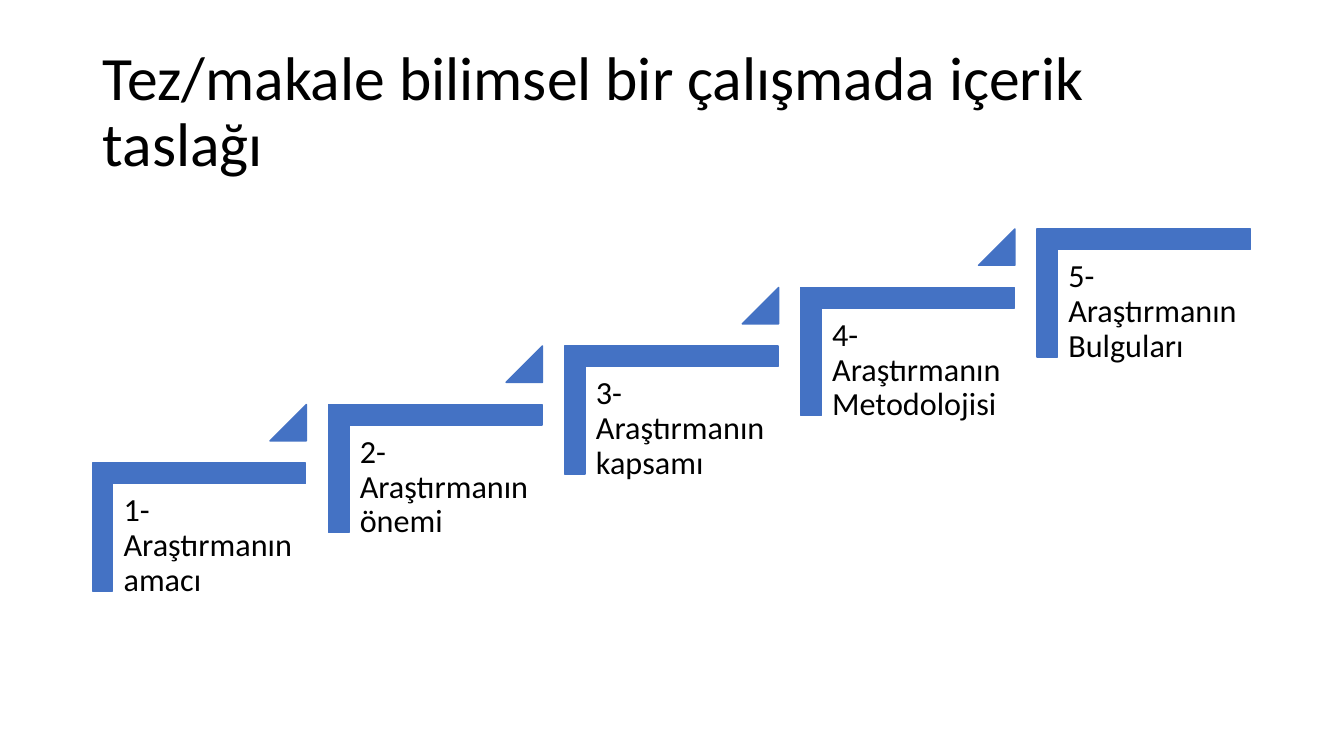
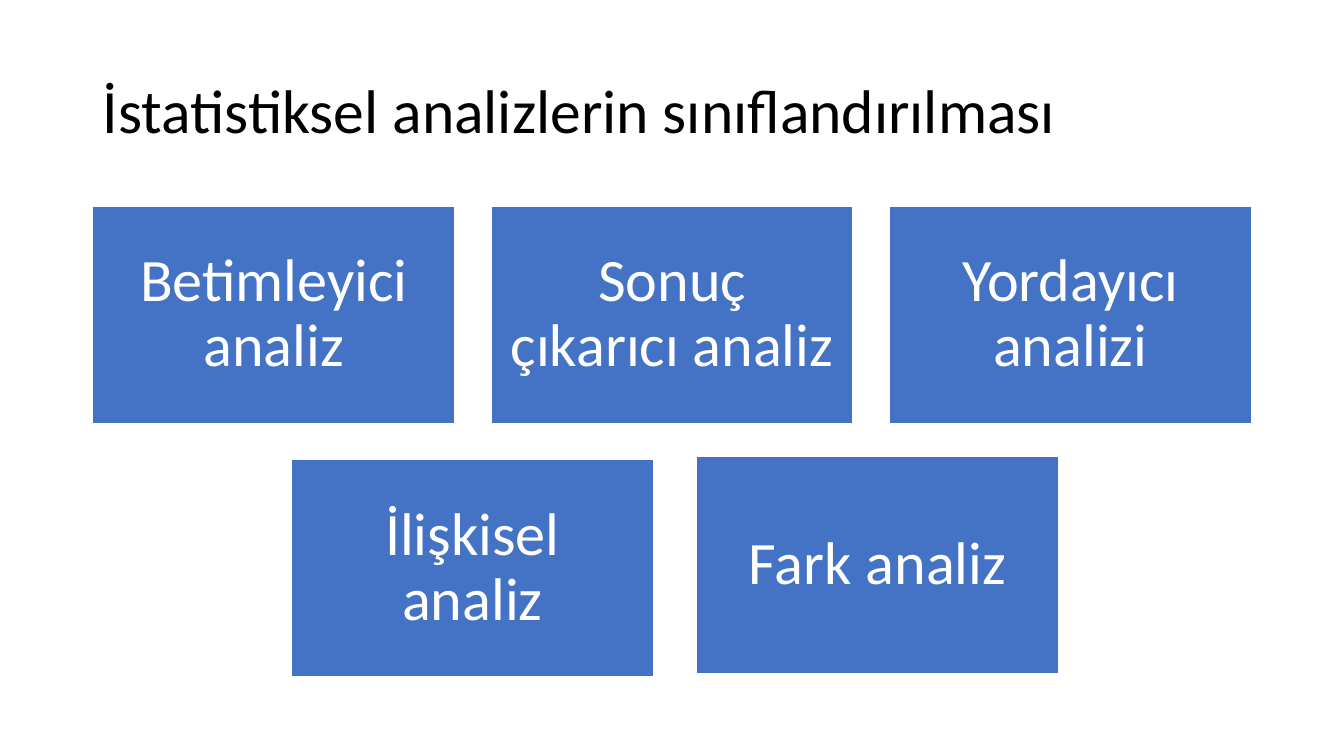
from dataclasses import dataclass

from pptx import Presentation
from pptx.dml.color import RGBColor
from pptx.enum.shapes import MSO_SHAPE
from pptx.enum.text import MSO_ANCHOR, PP_ALIGN
from pptx.util import Pt


@dataclass(frozen=True)
class Theme:
    """Colours, font and type sizes shared by the slides."""
    blue: RGBColor = RGBColor(0x44, 0x72, 0xC4)
    black: RGBColor = RGBColor(0, 0, 0)
    white: RGBColor = RGBColor(0xFF, 0xFF, 0xFF)
    font: str = "Calibri"
    title: float = 44
    step: float = 23
    card: float = 43


THEME = Theme()
LEFT = 66.24
STEPS = ["1- Araştırmanın amacı", "2- Araştırmanın önemi", "3- Araştırmanın kapsamı",
         "4- Araştırmanın Metodolojisi", "5- Araştırmanın Bulguları"]
TOP_CARDS = ["Betimleyici analiz", "Sonuç çıkarıcı analiz", "Yordayıcı analizi"]
LOWER_CARDS = [("İlişkisel analiz", 208.1, 328.4), ("Fark analiz", 497.5, 326.2)]


def write(sp, text, size, color, inset=7.2, align=PP_ALIGN.LEFT, anchor=MSO_ANCHOR.TOP):
    """Write one styled paragraph into a shape."""
    tf = sp.text_frame
    tf.text = text
    tf.word_wrap = True
    tf.vertical_anchor = anchor
    tf.margin_left = tf.margin_right = tf.margin_top = tf.margin_bottom = Pt(inset)
    p = tf.paragraphs[0]
    p.alignment = align
    p.line_spacing = 0.9
    font = p.runs[0].font
    font.name, font.size, font.color.rgb = THEME.font, Pt(size), color


def add_text(s, box, text, size, **style):
    """Add a text box in black type."""
    sp = s.shapes.add_textbox(*map(Pt, box))
    write(sp, text, size, THEME.black, **style)


def add_block(s, kind, box, line):
    """Add a blue preset shape with a thin outline."""
    sp = s.shapes.add_shape(kind, *map(Pt, box))
    sp.shadow.inherit = False
    sp.fill.solid()
    sp.fill.fore_color.rgb = THEME.blue
    sp.line.color.rgb = line
    sp.line.width = Pt(1)
    return sp


def add_titled_slide(prs, title):
    """Add a blank slide with the shared title."""
    s = prs.slides.add_slide(prs.slide_layouts[6])
    add_text(s, (LEFT, 28.75, 828, 104.4), title, THEME.title, anchor=MSO_ANCHOR.MIDDLE)
    return s


def add_step(s, x, y, text, has_next):
    """Add a stair step, with a triangle when another step follows."""
    corner = add_block(s, MSO_SHAPE.CORNER, (x, y, 91.5, 152.5), THEME.blue)
    corner.rotation = 90
    corner.adjustments[0] = corner.adjustments[1] = 0.16
    add_text(s, (x - 15.2, y + 45.4, 137.5, 121), text, THEME.step)
    if has_next:
        triangle = add_block(s, MSO_SHAPE.ISOSCELES_TRIANGLE,
                             (x + 96.4, y - 11.4, 26, 26), THEME.blue)
        triangle.adjustments[0] = 1


def add_card(s, x, y, text):
    """Add a blue card with centred white text."""
    sp = add_block(s, MSO_SHAPE.RECTANGLE, (x, y, 258.6, 155.2), THEME.white)
    write(sp, text, THEME.card, THEME.white, inset=12.9,
          align=PP_ALIGN.CENTER, anchor=MSO_ANCHOR.MIDDLE)


def build_outline(prs):
    """Build the rising staircase of study contents."""
    s = add_titled_slide(prs, "Tez/makale bilimsel bir çalışmada içerik taslağı")
    for i, text in enumerate(STEPS):
        add_step(s, 96.4 + 168.7 * i, 300.3 - 41.8 * i, text, i < len(STEPS) - 1)


def build_analyses(prs):
    """Build the cards that classify the analyses."""
    s = add_titled_slide(prs, "İstatistiksel analizlerin sınıflandırılması")
    for i, text in enumerate(TOP_CARDS):
        add_card(s, LEFT + 284.5 * i, 147.2, text)
    for text, x, y in LOWER_CARDS:
        add_card(s, x, y, text)


def main():
    """Build and save the presentation."""
    prs = Presentation()
    prs.slide_width, prs.slide_height = Pt(960), Pt(540)
    build_outline(prs)
    build_analyses(prs)
    prs.save("out.pptx")


if __name__ == "__main__":
    main()
